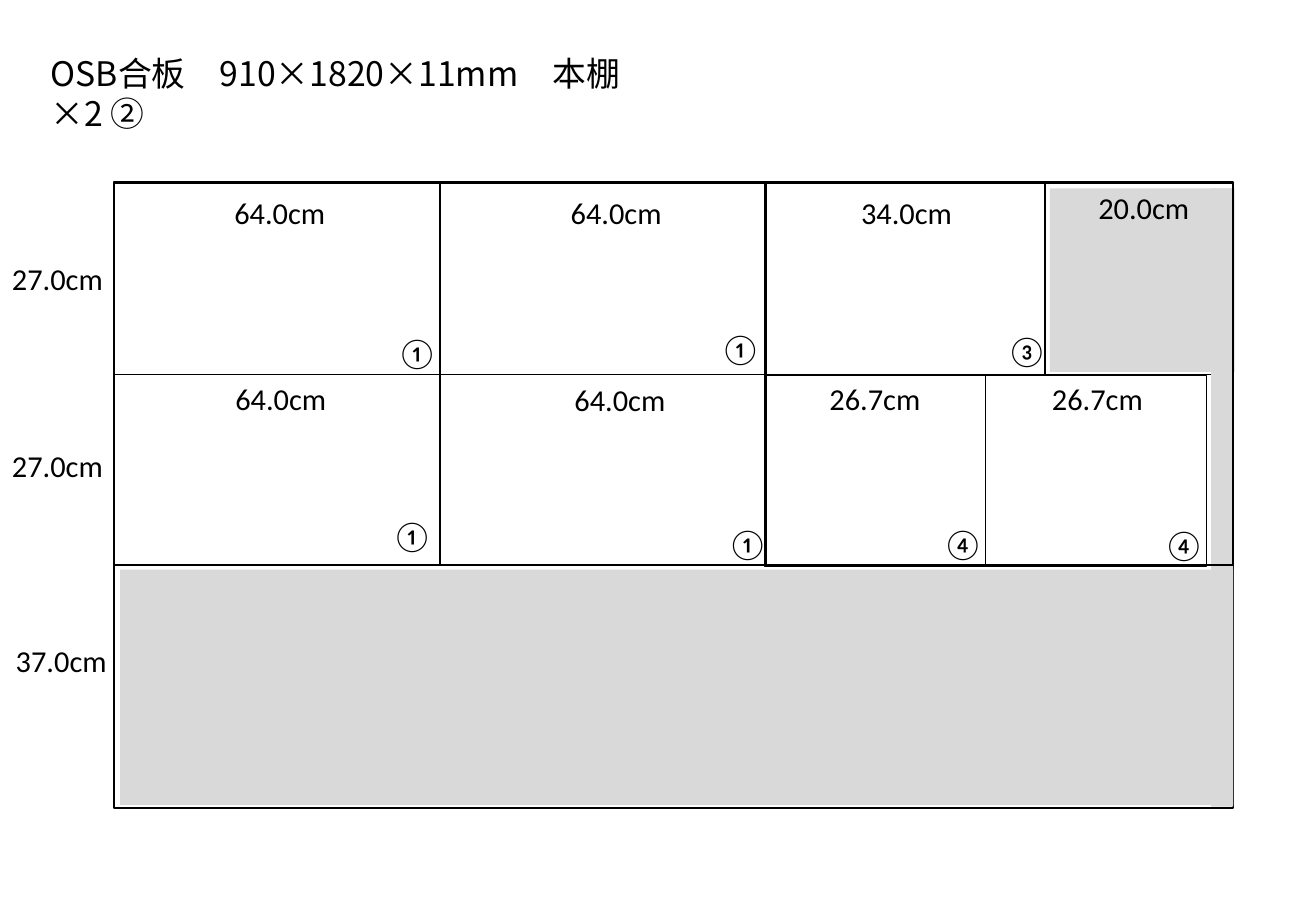
from lxml import etree
from pptx import Presentation, util as u
from pptx.dml.color import RGBColor
from pptx.enum import shapes, text
from pptx.oxml.ns import qn

BLACK, OFFCUT = "000000", "D9D9D9"
ROW, PANEL, SMALL = 3.99, 6.81, 4.62
THIRD = 13.59


def colour(hex_string):
    return RGBColor.from_string(hex_string)


def add_rect(page, box, fill=None):
    rect = page.shapes.add_shape(shapes.MSO_SHAPE.RECTANGLE, *map(u.Cm, box))
    rect.shadow.inherit = False
    if fill:
        rect.fill.solid()
        rect.fill.fore_color.rgb = colour(fill)
        rect.line.fill.background()
    else:
        rect.fill.background()
        rect.line.color.rgb = colour(BLACK)
        rect.line.width = u.Pt(1)


def add_text(page, box, wording, size=18, font="Calibri", wrap=False):
    label = page.shapes.add_textbox(*map(u.Cm, box))
    frame = label.text_frame
    frame.text = wording
    frame.word_wrap = wrap
    frame.auto_size = text.MSO_AUTO_SIZE.SHAPE_TO_FIT_TEXT
    span = frame.paragraphs[0].runs[0]
    span.font.size = u.Pt(size)
    span.font.name = font
    span.font.color.rgb = colour(BLACK)
    return span


def draw_title(page, box):
    font = "Noto Sans CJK JP"
    span = add_text(page, box, "OSB合板\u3000910×1820×11mm\u3000本棚×2 ②".replace("\u3000", "　"),
                    20, font, wrap=True)
    etree.SubElement(span.font._element, qn("a:ea")).set("typeface", font)


def draw_board(page, box):
    left, top, width, height = box
    parts = [
        (19.56, 0.1, 3.86, 3.84, OFFCUT),
        (0, 0, width, height, None),
        (0, 0, width, ROW, None),
        (0, ROW, width, ROW, None),
        (0, 0, PANEL, 2 * ROW, None),
        (THIRD, 0, 5.87, ROW, None),
        (0.12, 8.07, 23.27, 4.93, OFFCUT),
        (22.93, 0.1, 0.46, 12.93, OFFCUT),
        (PANEL, 0, PANEL, 2 * ROW, None),
        (THIRD, 4.01, SMALL, ROW, None),
        (THIRD + SMALL, 4.01, SMALL, ROW, None),
        (0, -0.03, width, 8, None),
    ]
    for x, y, w, h, fill in parts:
        add_rect(page, (left + x, top + y, w, h), fill)


def draw_sizes(page, box):
    left, top = box[:2]
    sizes = [
        ("64.0cm", 2.26, 0.1), ("64.0cm", 9.29, 0.1),
        ("34.0cm", 15.36, 0.1), ("20.0cm", 20.32, 0),
        ("64.0cm", 2.28, 3.98), ("64.0cm", 9.37, 4.01),
        ("26.7cm", 14.7, 3.98), ("26.7cm", 19.35, 3.98),
        ("27.0cm", -2.39, 1.47), ("27.0cm", -2.39, 5.38),
        ("37.0cm", -2.31, 9.47),
    ]
    for wording, x, y in sizes:
        add_text(page, (left + x, top + y, 2.44, 1.02), wording)


def draw_marks(page, box):
    left, top = box[:2]
    marks = [
        ("①", 5.66, 3.02), ("①", 12.42, 2.94), ("③", 18.41, 2.99),
        ("①", 5.56, 6.85), ("①", 12.57, 7.01),
        ("④", 17.07, 7.01), ("④", 21.69, 7.03),
    ]
    for wording, x, y in marks:
        add_text(page, (left + x, top + y, 1.12, 1.02), wording, wrap=True)


def main():
    deck = Presentation()
    deck.slide_width, deck.slide_height = u.Cm(27.51), u.Cm(19.05)
    page = deck.slides.add_slide(deck.slide_layouts[6])
    board = (2.39, 3.84, 23.39, 13.06)
    draw_title(page, (0.81, 0.97, 13.26, 1.12))
    draw_board(page, board)
    draw_sizes(page, board)
    draw_marks(page, board)
    deck.save("out.pptx")


if __name__ == "__main__":
    main()
